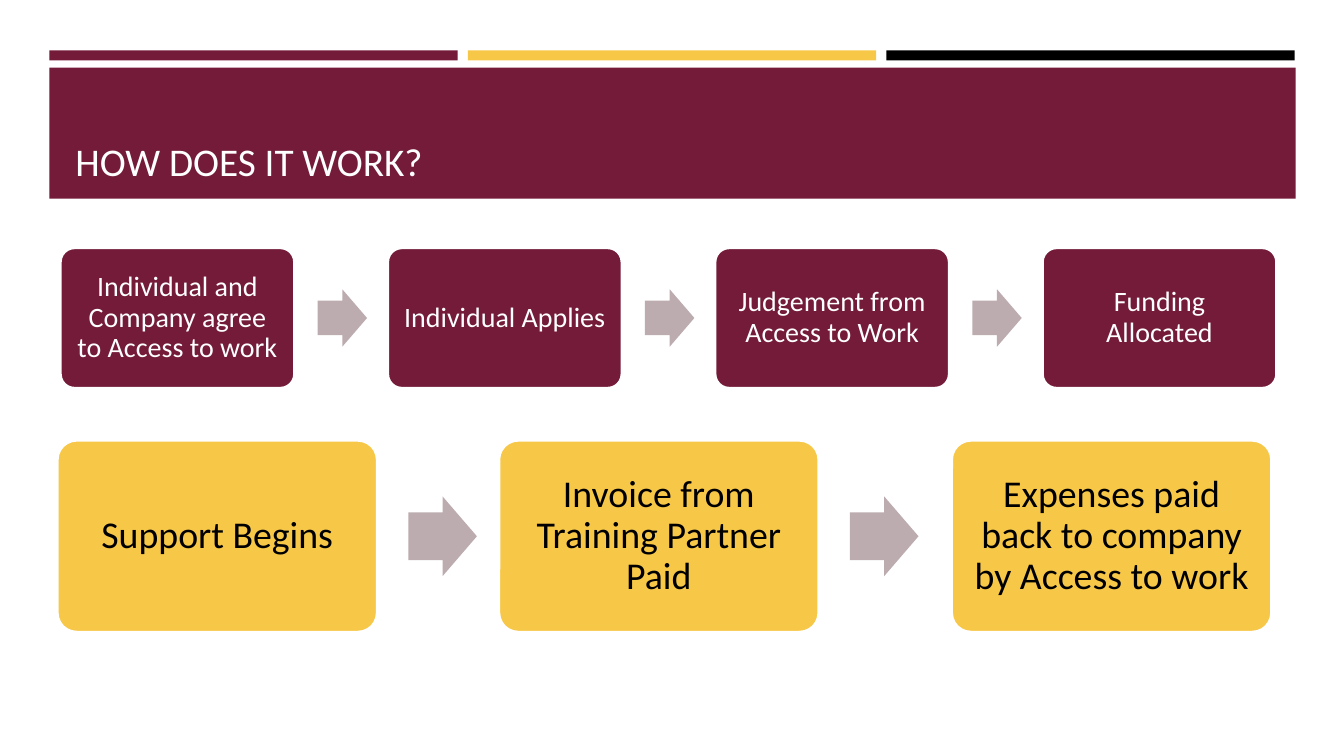
from pptx import Presentation
from pptx.dml.color import RGBColor
from pptx.enum.shapes import MSO_SHAPE
from pptx.enum.text import MSO_ANCHOR, PP_ALIGN
from pptx.util import Emu, Pt

RECT = MSO_SHAPE.RECTANGLE
ROUNDED = MSO_SHAPE.ROUNDED_RECTANGLE
ARROW = MSO_SHAPE.RIGHT_ARROW
LEFT, CENTER = PP_ALIGN.LEFT, PP_ALIGN.CENTER
MIDDLE, BOTTOM = MSO_ANCHOR.MIDDLE, MSO_ANCHOR.BOTTOM

PX = 9144  # 100 px to the inch
FONT = "Calibri"
MAROON, GOLD, GRAY = "731B38", "F7C748", "BCACAF"
BLACK, WHITE = "000000", "FFFFFF"


def px(length):
    return Emu(round(length * PX))


def color(hex_value):
    return RGBColor.from_string(hex_value)


def add_block(page, kind, box, fill, outline=None, adjustments=()):
    shape = page.shapes.add_shape(kind, *map(px, box))
    shape.shadow.inherit = False
    shape.fill.solid()
    shape.fill.fore_color.rgb = color(fill)
    if outline:
        shape.line.color.rgb = color(outline)
        shape.line.width = Pt(1.75)
    else:
        shape.line.fill.background()
    for index, value in enumerate(adjustments):
        shape.adjustments[index] = value
    return shape


def write_text(shape, text, size, ink, align=CENTER, anchor=MIDDLE,
               insets=(10, 5), line_spacing=0.9):
    frame = shape.text_frame
    frame.word_wrap = True
    frame.vertical_anchor = anchor
    frame.margin_left = frame.margin_right = px(insets[0])
    frame.margin_top = frame.margin_bottom = px(insets[1])
    para = frame.paragraphs[0]
    para.alignment = align
    para.line_spacing = line_spacing
    span = para.add_run()
    span.text = text
    span.font.name = FONT
    span.font.size = Pt(size)
    span.font.color.rgb = color(ink)


def add_header(page, box, title):
    """Three thin bars above a title band."""
    left, top, width, height = box
    bar_width, bar_height, gap, band_drop = 405, 10, 10, 17
    for index, fill in enumerate((MAROON, GOLD, BLACK)):
        bar_left = left + index * (bar_width + gap)
        add_block(page, RECT, (bar_left, top, bar_width, bar_height), fill)
    add_block(page, RECT,
              (left, top + band_drop, width, height - band_drop), MAROON)
    title_box = page.shapes.add_textbox(
        *map(px, (left + 16, top + 27, width - 31, height - 36)))
    write_text(title_box, title, 28, WHITE, align=LEFT, anchor=BOTTOM)


def add_step_row(page, box, steps, lefts, arrow_size, arrow_gap,
                 fill, ink, size, inset):
    """Rounded steps joined by arrows; box is the size of the first step."""
    left, top, width, height = box
    arrow_width, arrow_height = arrow_size
    arrow_top = top + (height - arrow_height) / 2
    for index, (step, offset) in enumerate(zip(steps, lefts)):
        step_left = left + offset
        card = add_block(page, ROUNDED, (step_left, top, width, height),
                         fill, WHITE, (0.1,))
        write_text(card, step, size, ink, insets=(inset, inset))
        if index < len(steps) - 1:
            add_block(page, ARROW,
                      (step_left + width + arrow_gap, arrow_top,
                       arrow_width, arrow_height), GRAY,
                      adjustments=(0.6, 0.5))


def main():
    deck = Presentation()
    deck.slide_width, deck.slide_height = px(1333), px(750)
    page = deck.slides.add_slide(deck.slide_layouts[6])
    add_header(page, (49, 50, 1236, 147), "HOW DOES IT WORK?")
    add_step_row(
        page, (60, 246, 232, 139),
        ["Individual and Company agree to Access to work",
         "Individual Applies",
         "Judgement from Access to Work",
         "Funding Allocated"],
        lefts=[index * 974 / 3 for index in range(4)],
        arrow_size=(49, 57), arrow_gap=23,
        fill=MAROON, ink=WHITE, size=20, inset=11)
    add_step_row(
        page, (57, 437, 317, 190),
        ["Support Begins",
         "Invoice from Training Partner Paid",
         "Expenses paid back to company by Access to work"],
        lefts=[0, 438, 887],
        arrow_size=(68, 79), arrow_gap=31,
        fill=GOLD, ink=BLACK, size=27, inset=16)
    deck.save("out.pptx")


if __name__ == "__main__":
    main()
